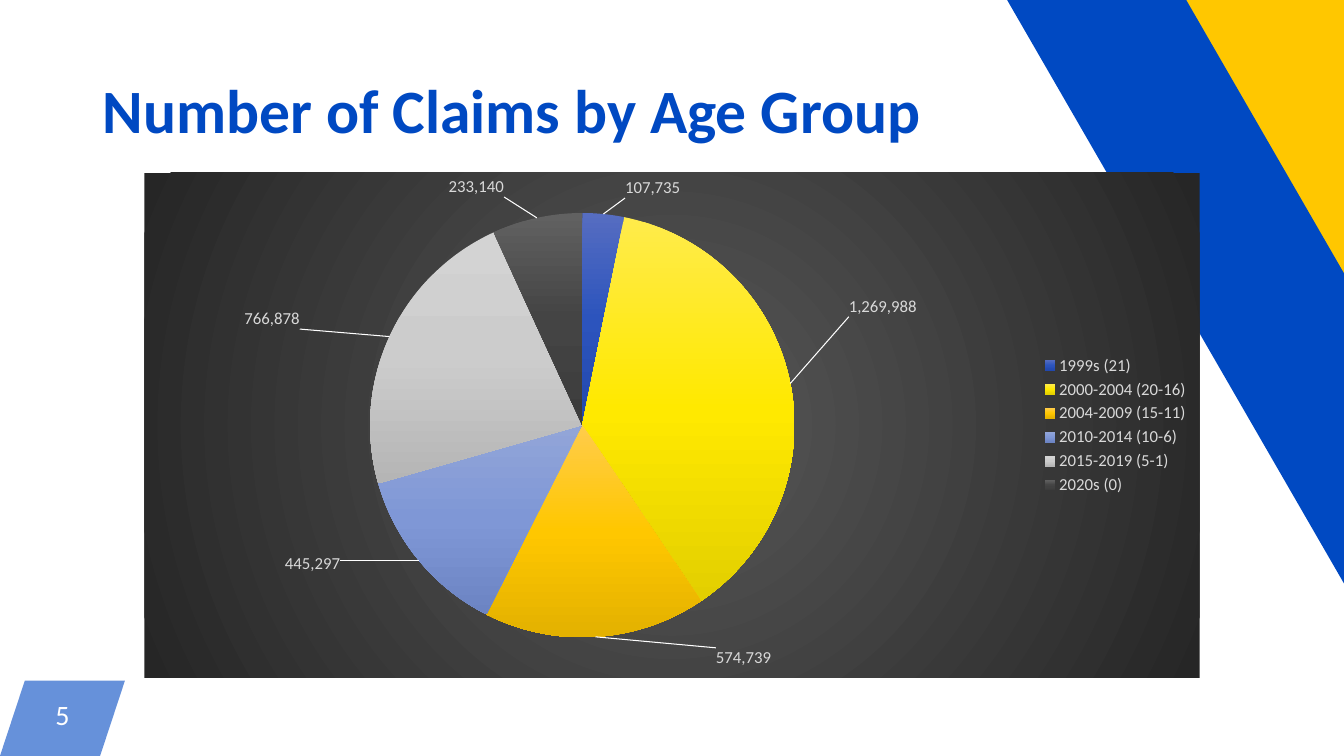
import pptx
import pptx.chart.data
import pptx.dml.color
import pptx.enum.chart
import pptx.enum.shapes
import pptx.enum.text
import pptx.oxml
import pptx.oxml.ns
import pptx.util

Cm = pptx.util.Cm
Pt = pptx.util.Pt
qn = pptx.oxml.ns.qn
SPACE = pptx.oxml.ns.nsdecls("a", "c")
FACE = "Calibri"
BLUE, GOLD, WHITE, PALE = "0049C2", "FFC700", "FFFFFF", "D9D9D9"
WIDE, HIGH = 33.87, 19.05

# Age group, claims, slice shades from top to bottom, label shift in chart parts
CLAIMS = [
    ("1999s (21)", 107735, ("566DC1", "2C54BD", "2248AD"), (0.02, -0.02)),
    ("2000-2004 (20-16)", 1269988, ("FFEB4B", "FFE900", "E3CF00"), (0.05, -0.13)),
    ("2004-2009 (15-11)", 574739, ("FFCC4B", "FFC700", "E3B100"), (0.14, 0.01)),
    ("2010-2014 (10-6)", 445297, ("92A5D8", "7F97D6", "6C84C3"), (-0.07, -0.02)),
    ("2015-2019 (5-1)", 766878, ("D3D3D3", "CCCCCC", "B5B5B5"), (-0.08, -0.01)),
    ("2020s (0)", 233140, ("616161", "444444", "3C3C3C"), (-0.03, -0.03)),
]


def color(code):
    return pptx.dml.color.RGBColor.from_string(code)


def style(font, size, code, bold=False):
    font.name, font.size, font.bold = FACE, Pt(size), bold
    font.color.rgb = color(code)


def paint(shape, code):
    shape.fill.solid()
    shape.fill.fore_color.rgb = color(code)
    shape.line.fill.background()
    shape.shadow.inherit = False


def node(text):
    """Parse one XML element, with its namespaces added."""
    head, rest = text.split(">", 1)
    slash = "/" if head.endswith("/") else ""
    return pptx.oxml.parse_xml(f"{head.rstrip('/')} {SPACE}{slash}>{rest}")


def blend(shades, shade):
    """Gradient with evenly spaced stops."""
    step = 100000 // (len(shades) - 1)
    stops = "".join(
        f'<a:gs pos="{i * step}"><a:srgbClr val="{code}"/></a:gs>'
        for i, code in enumerate(shades))
    return f"<a:gradFill><a:gsLst>{stops}</a:gsLst>{shade}</a:gradFill>"


def layout(x, y, more=""):
    return node(f'<c:layout><c:manualLayout>{more}<c:x val="{x}"/><c:y val="{y}"/>'
                "</c:manualLayout></c:layout>")


def add_band(slide, left, top, width, height, code):
    """Diagonal band that runs over the corner."""
    band = slide.shapes.add_shape(pptx.enum.shapes.MSO_SHAPE.RECTANGLE,
                                  Cm(left), Cm(top), Cm(width), Cm(height))
    band.rotation = 330
    paint(band, code)


def add_number(slide, left, top, width, height):
    """Slanted tab with the page number."""
    tab = slide.shapes.add_shape(pptx.enum.shapes.MSO_SHAPE.PARALLELOGRAM,
                                 Cm(left), Cm(top), Cm(width), Cm(height))
    tab.adjustments[0] = 0.33
    paint(tab, BLUE)
    tint = tab.element.spPr.find(qn("a:solidFill"))[0]
    tint.append(node('<a:alpha val="60000"/>'))

    inset = 0.64
    box = slide.shapes.add_textbox(Cm(left + inset), Cm(top),
                                   Cm(width - 2 * inset), Cm(height))
    frame = box.text_frame
    frame.word_wrap = True
    frame.vertical_anchor = pptx.enum.text.MSO_ANCHOR.MIDDLE
    frame.margin_left = frame.margin_right = Cm(0.1)
    frame.margin_top = frame.margin_bottom = Cm(0.1)
    para = frame.paragraphs[0]
    para.alignment = pptx.enum.text.PP_ALIGN.CENTER
    para.line_spacing = Pt(17.7)
    run = para.add_run()
    run.text = "5"
    style(run.font, 20, WHITE)


def add_title(slide, left, top, width, height):
    title = slide.shapes.title
    title.left, title.top = Cm(left), Cm(top)
    title.width, title.height = Cm(width), Cm(height)
    frame = title.text_frame
    frame.word_wrap = True
    frame.vertical_anchor = pptx.enum.text.MSO_ANCHOR.MIDDLE
    para = frame.paragraphs[0]
    para.alignment = pptx.enum.text.PP_ALIGN.LEFT
    para.line_spacing = 0.9
    run = para.add_run()
    run.text = "Number of Claims by Age Group"
    style(run.font, 44, BLUE, bold=True)


def add_pie(slide, left, top, width, height):
    """Pie of claims on a dark panel."""
    kinds = pptx.enum.chart
    data = pptx.chart.data.CategoryChartData()
    data.categories = [claim[0] for claim in CLAIMS]
    data.add_series("Series 1", [claim[1] for claim in CLAIMS])
    chart = slide.shapes.add_chart(kinds.XL_CHART_TYPE.PIE, Cm(left), Cm(top),
                                   Cm(width), Cm(height), data).chart
    root = chart.element
    style(chart.font, 12, "000000")
    chart.has_title = False
    chart.has_legend = True
    chart.legend.position = kinds.XL_LEGEND_POSITION.RIGHT
    chart.legend.include_in_layout = False
    style(chart.legend.font, 12, PALE)

    # Panel
    glow = ('<a:path path="circle"><a:fillToRect l="50000" t="50000" '
            'r="50000" b="50000"/></a:path>')
    root.find(qn("c:chart")).addnext(node(
        f"<c:spPr>{blend(('595959', '262626'), glow)}"
        "<a:ln><a:noFill/></a:ln></c:spPr>"))

    # Place of the pie
    plot = root.find(".//" + qn("c:plotArea"))
    for old in plot.findall(qn("c:layout")):
        plot.remove(old)
    place = layout(0.21, 0.08, '<c:layoutTarget val="inner"/>'
                   '<c:xMode val="edge"/><c:yMode val="edge"/>')
    place[0].append(node('<c:w val="0.41"/>'))
    place[0].append(node('<c:h val="0.84"/>'))
    plot.insert(0, place)

    # Labels and leader lines
    chart.plots[0].vary_by_categories = True
    series = chart.plots[0].series[0]
    labels = series.data_labels
    labels.show_value = True
    labels.show_percentage = False
    labels.number_format = "#,##0"
    labels.number_format_is_linked = False
    labels.position = kinds.XL_LABEL_POSITION.OUTSIDE_END
    style(labels.font, 12, PALE)
    group = root.find(".//" + qn("c:dLbls"))
    guide = group.find(qn("c:showLeaderLines"))
    if guide is None:
        guide = node("<c:showLeaderLines/>")
        group.append(guide)
    guide.set("val", "1")
    guide.addnext(node('<c:leaderLines><c:spPr><a:ln w="9525"><a:solidFill>'
                       f'<a:srgbClr val="{WHITE}"/></a:solidFill></a:ln>'
                       "</c:spPr></c:leaderLines>"))

    # Slices
    for i, (_, _, shades, shift) in enumerate(CLAIMS):
        point = series.points[i]
        point.format.fill.solid()
        skin = root.findall(".//" + qn("c:dPt"))[i].find(qn("c:spPr"))
        skin.remove(skin[0])
        skin.insert(0, node(blend(shades, '<a:lin ang="5400000" scaled="0"/>')))
        label = point.data_label
        style(label.font, 12, PALE)
        label.position = kinds.XL_LABEL_POSITION.OUTSIDE_END
        mark = group.findall(qn("c:dLbl"))[i].find(qn("c:idx"))
        mark.addnext(node('<c:numFmt formatCode="#,##0" sourceLinked="0"/>'))
        mark.addnext(layout(*shift))


def main():
    deck = pptx.Presentation()
    deck.slide_width, deck.slide_height = Cm(WIDE), Cm(HIGH)
    slide = deck.slides.add_slide(deck.slide_layouts[5])
    add_number(slide, 0, HIGH - 1.9, 3.15, 1.9)
    add_band(slide, 32.46, -8.41, 5, 24.92, GOLD)
    add_band(slide, 30.02, -4.95, 3.91, 24.92, BLUE)
    add_title(slide, 2.34, 1.02, 29.21, 3.68)
    add_pie(slide, 3.64, 4.35, 26.59, 12.73)
    deck.save("out.pptx")


if __name__ == "__main__":
    main()
